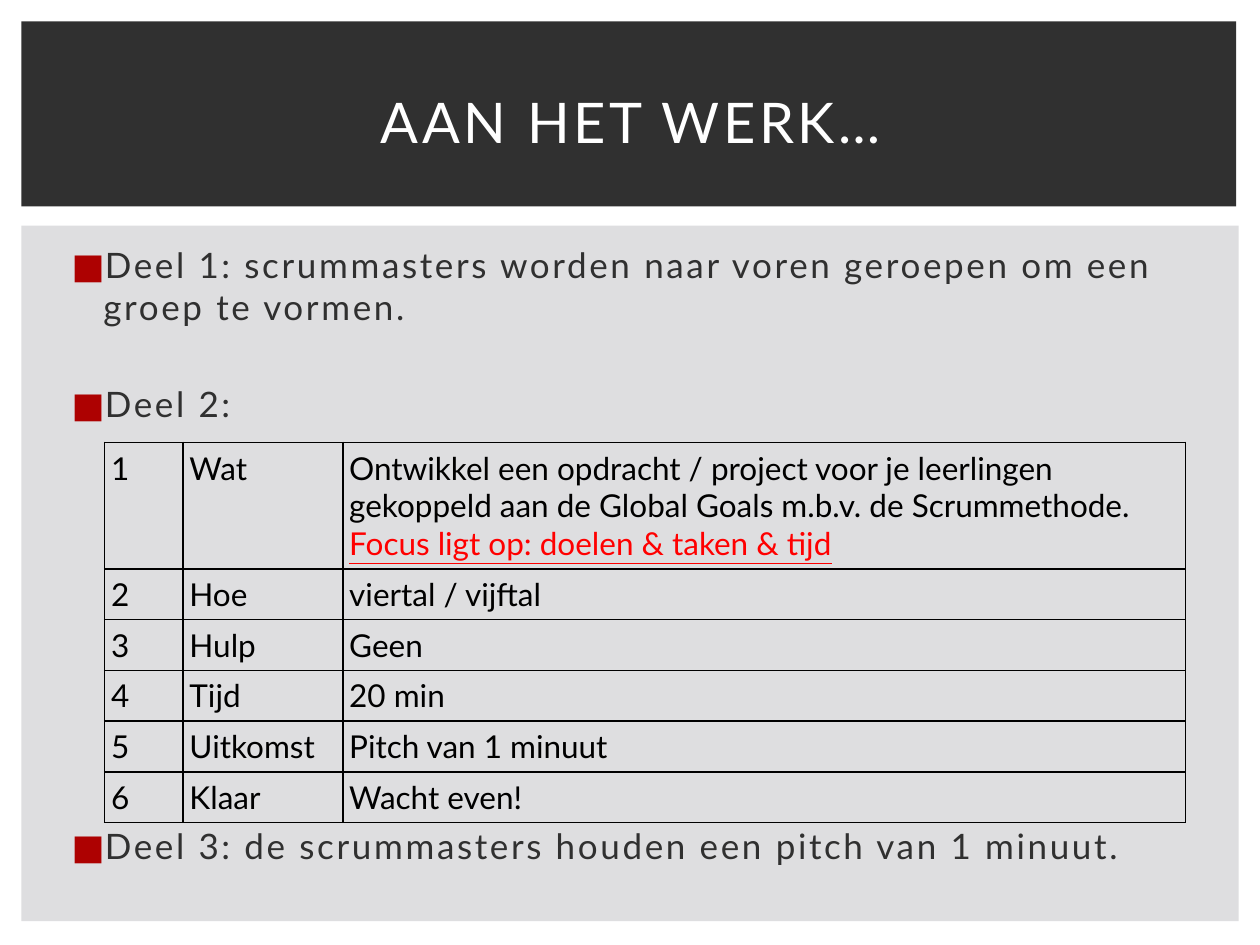
from lxml import etree
from pptx import Presentation
from pptx.dml.color import RGBColor
from pptx.enum.shapes import MSO_SHAPE
from pptx.enum.text import MSO_ANCHOR, MSO_AUTO_SIZE, PP_ALIGN
from pptx.oxml.ns import qn
from pptx.util import Cm, Pt

RECTANGLE = MSO_SHAPE.RECTANGLE
MIDDLE = MSO_ANCHOR.MIDDLE
NO_AUTOFIT = MSO_AUTO_SIZE.NONE
CENTER, LEFT = PP_ALIGN.CENTER, PP_ALIGN.LEFT
DARK, WHITE, BLACK, RED = "303030", "FFFFFF", "000000", "FF0000"
PANEL, BULLET = "DEDEE0", "AD0101"


def color(value):
    return RGBColor.from_string(value)


def style_runs(para, size, value, spacing=0):
    for span in para.runs:
        span.font.name = "Lato"
        span.font.size = Pt(size)
        span.font.color.rgb = color(value)
        if spacing:
            span._r.get_or_add_rPr().set("spc", str(spacing))


deck = Presentation()
deck.slide_width, deck.slide_height = Cm(25.4), Cm(19.05)
page = deck.slides.add_slide(deck.slide_layouts[1])

# Background panels, placed behind the placeholders
panels = [
    (0.43, 0.43, 24.49, 3.73, DARK),
    (0.43, 4.55, 24.54, 14.02, PANEL),
]
for left, top, width, height, fill in panels:
    panel = page.shapes.add_shape(RECTANGLE, Cm(left), Cm(top), Cm(width), Cm(height))
    panel.shadow.inherit = False
    panel.fill.solid()
    panel.fill.fore_color.rgb = color(fill)
    panel.line.fill.background()
    page.shapes._spTree.insert(2, panel._element)

# Title
title = page.shapes.title
title.left, title.top, title.width, title.height = Cm(1.07), Cm(0.99), Cm(23.29), Cm(2.92)
title.text_frame.text = "AAN HET WERK…"
title.text_frame.vertical_anchor = MIDDLE
title.text_frame.auto_size = NO_AUTOFIT
heading = title.text_frame.paragraphs[0]
heading.alignment = CENTER
style_runs(heading, 32, WHITE, 200)

# Bulleted parts, with room for the table before the last one
parts = [
    ("Deel 1: scrummasters worden naar voren geroepen om een groep te vormen.", 0),
    ("Deel 2:", 31.5),
    ("Deel 3: de scrummasters houden een pitch van 1 minuut.", 228.5),
]
body = page.placeholders[1]
body.left, body.top, body.width, body.height = Cm(1.07), Cm(4.78), Cm(23.34), Cm(13.16)
body.text_frame.auto_size = NO_AUTOFIT
body.text_frame.text = "\n".join(text for text, gap in parts)
for para, (text, gap) in zip(body.text_frame.paragraphs, parts):
    para.alignment = LEFT
    para.space_before = Pt(gap)
    style_runs(para, 20, DARK, 150)
    properties = para._p.get_or_add_pPr()
    properties.set("marL", str(Cm(0.76)))
    properties.set("indent", str(-Cm(0.64)))
    bullet_color = etree.SubElement(properties, qn("a:buClr"))
    etree.SubElement(bullet_color, qn("a:srgbClr"), val=BULLET)
    etree.SubElement(properties, qn("a:buFont"), typeface="Lato")
    etree.SubElement(properties, qn("a:buChar"), char="■")

# Assignment table
rows = [
    ("1", "Wat", "Ontwikkel een opdracht / project voor je leerlingen gekoppeld aan "
     "de Global Goals m.b.v. de Scrummethode.\nFocus ligt op: doelen & taken & tijd"),
    ("2", "Hoe", "viertal / vijftal"),
    ("3", "Hulp", "Geen"),
    ("4", "Tijd", "20 min"),
    ("5", "Uitkomst", "Pitch van 1 minuut"),
    ("6", "Klaar", "Wacht even!"),
]
frame = page.shapes.add_table(len(rows), 3, Cm(2.11), Cm(8.92), Cm(21.79), Cm(7.62))
table = frame.table
table.first_row = table.horz_banding = False
for column, width in zip(table.columns, (1.58, 3.22, 16.99)):
    column.width = Cm(width)
for index, texts in enumerate(rows):
    table.rows[index].height = Cm(1.01 if index else 2.54)
    for cell, text in zip(table.rows[index].cells, texts):
        cell.text_frame.text = text
        cell.margin_left = cell.margin_right = cell.margin_top = cell.margin_bottom = Cm(0.13)
        for para in cell.text_frame.paragraphs:
            style_runs(para, 18, BLACK)
        cell_properties = cell._tc.get_or_add_tcPr()
        for side in ("a:lnL", "a:lnR", "a:lnT", "a:lnB"):
            border = etree.SubElement(cell_properties, qn(side), w=str(Pt(1)))
            border_fill = etree.SubElement(border, qn("a:solidFill"))
            etree.SubElement(border_fill, qn("a:srgbClr"), val=BLACK)
        cell.fill.background()

# Focus line in the first row
focus = table.cell(0, 2).text_frame.paragraphs[1].runs[0]
focus.font.color.rgb = color(RED)
focus.font.underline = True

deck.save("out.pptx")
